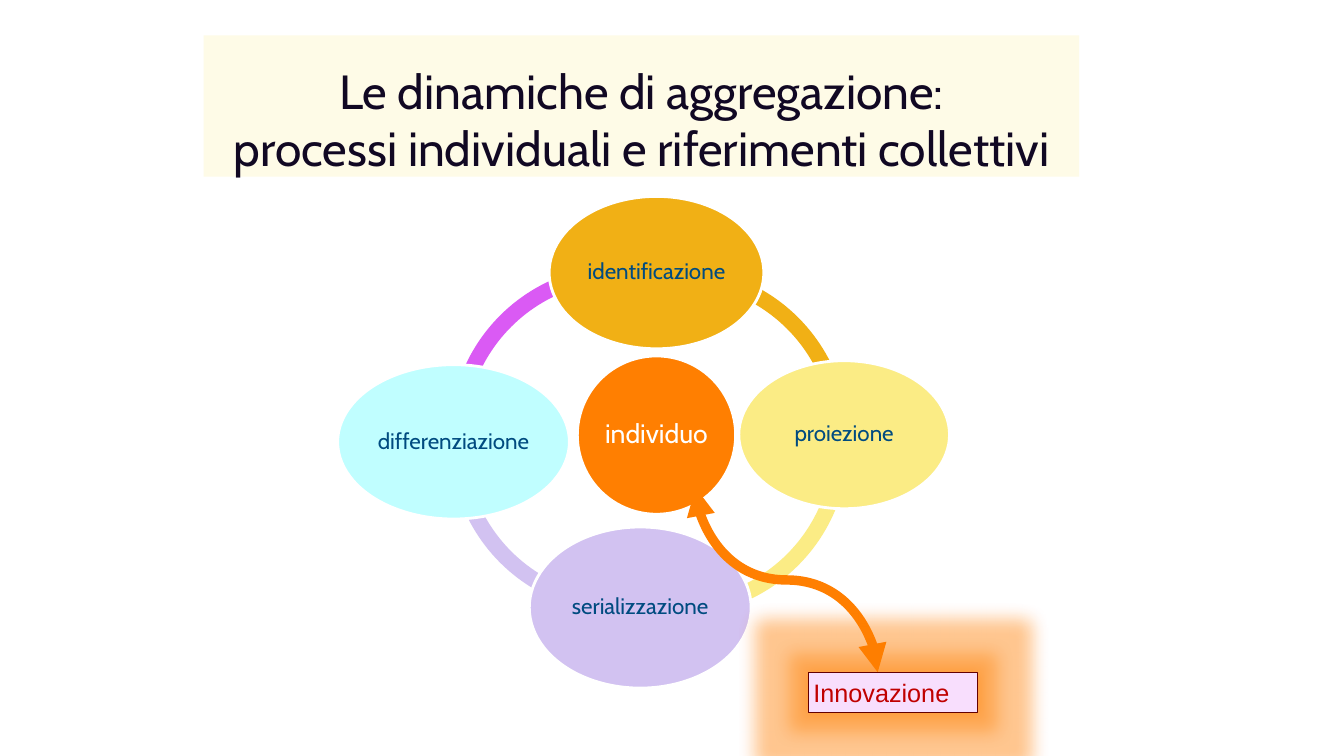
from dataclasses import dataclass

from lxml.etree import SubElement
from pptx import Presentation
from pptx.dml.color import RGBColor
from pptx.enum.shapes import MSO_CONNECTOR, MSO_SHAPE
from pptx.enum.text import MSO_ANCHOR, PP_ALIGN
from pptx.oxml.ns import qn
from pptx.util import Cm, Pt


@dataclass(frozen=True)
class Theme:
    cream: str = "FEFBE7"
    ink: str = "110823"
    gold: str = "F1B015"
    yellow: str = "FBEC85"
    lilac: str = "D2C2F1"
    magenta: str = "DA5AF4"
    cyan: str = "C0FEFF"
    orange: str = "FF7F01"
    navy: str = "004B80"
    white: str = "FFFFFF"
    pink: str = "F8DEFD"
    maroon: str = "640000"
    red: str = "C00000"
    font: str = "Cabin"
    label_font: str = "Arial"
    title_size: float = 34.2
    hub_size: float = 19
    node_size: float = 16
    label_size: float = 18


class DiagramSlide:
    def __init__(self, slide, theme):
        self.slide = slide
        self.theme = theme

    def shape(self, kind, box, fill, line=None, line_width=1):
        shape = self.slide.shapes.add_shape(kind, *map(Cm, box))
        shape.shadow.inherit = False
        shape.fill.solid()
        shape.fill.fore_color.rgb = RGBColor.from_string(fill)
        if line:
            shape.line.color.rgb = RGBColor.from_string(line)
            shape.line.width = Pt(line_width)
        else:
            shape.line.fill.background()
        return shape

    def set_text(self, shape, text, size, color, font=None, align=PP_ALIGN.CENTER,
                 spacing=1.0, **frame_format):
        frame = shape.text_frame
        for name, value in {"word_wrap": True, **frame_format}.items():
            setattr(frame, name, value)
        paragraph = frame.paragraphs[0]
        paragraph.text = text
        paragraph.alignment = align
        paragraph.line_spacing = spacing
        run_format = {"name": font or self.theme.font, "size": Pt(size)}
        for run in paragraph.runs:
            for name, value in run_format.items():
                setattr(run.font, name, value)
            run.font.color.rgb = RGBColor.from_string(color)

    def title(self, text, box):
        shape = self.shape(MSO_SHAPE.RECTANGLE, box, self.theme.cream)
        self.set_text(shape, text, self.theme.title_size, self.theme.ink,
                      vertical_anchor=MSO_ANCHOR.BOTTOM, margin_bottom=0)

    def arc(self, left, top, diameter, start, end, color):
        """Draw a ring segment; start and end are in blockArc adjustment units."""
        shape = self.shape(MSO_SHAPE.BLOCK_ARC, (left, top, diameter, diameter), color)
        for index, value in enumerate((start, end, 0.046)):
            shape.adjustments[index] = value

    def node(self, text, box, fill, size, color):
        shape = self.shape(MSO_SHAPE.OVAL, box, fill, self.theme.white, 2)
        margins = {f"margin_{side}": Cm(0.05) for side in ("left", "top", "right", "bottom")}
        self.set_text(shape, text, size, color, spacing=0.9,
                      vertical_anchor=MSO_ANCHOR.MIDDLE, **margins)

    def curved_arrow(self, start, end, color, width):
        """Draw a double-headed S-curve that leaves and arrives vertically."""
        (x1, y1), (x2, y2) = start, end
        middle_x, middle_y = (x1 + x2) / 2, (y1 + y2) / 2
        half_width, half_height = (y2 - y1) / 2, (x2 - x1) / 2
        corners = (middle_x - half_width, middle_y - half_height,
                   middle_x + half_width, middle_y + half_height)
        connector = self.slide.shapes.add_connector(MSO_CONNECTOR.CURVE, *map(Cm, corners))
        connector.line.color.rgb = RGBColor.from_string(color)
        connector.line.width = Pt(width)
        properties = connector.element.spPr
        transform = properties.find(qn("a:xfrm"))
        transform.set("rot", str(270 * 60000))
        transform.set("flipH", "1")
        outline = properties.find(qn("a:ln"))
        for tag in ("a:headEnd", "a:tailEnd"):
            SubElement(outline, qn(tag), type="triangle")
        SubElement(properties, qn("a:effectLst"))

    def glowing_label(self, text, box):
        theme = self.theme
        shape = self.shape(MSO_SHAPE.RECTANGLE, box, theme.pink, theme.maroon)
        margins = {f"margin_{side}": Cm(0.13) for side in ("left", "top", "right", "bottom")}
        self.set_text(shape, text, theme.label_size, theme.red, theme.label_font,
                      PP_ALIGN.LEFT, vertical_anchor=MSO_ANCHOR.TOP, **margins)
        effects = shape.element.spPr.find(qn("a:effectLst"))
        for tag, radius_name, radius in (("a:glow", "rad", 0.9), ("a:outerShdw", "blurRad", 0.3)):
            effect = SubElement(effects, qn(tag), {radius_name: str(Cm(radius))})
            color = SubElement(effect, qn("a:srgbClr"), val=theme.orange)
            SubElement(color, qn("a:alpha"), val="40000")


def main():
    presentation = Presentation()
    presentation.slide_width, presentation.slide_height = Cm(33.87), Cm(19.05)
    theme = Theme()
    diagram = DiagramSlide(presentation.slides.add_slide(presentation.slide_layouts[6]), theme)

    diagram.title("Le dinamiche di aggregazione:\nprocessi individuali e riferimenti collettivi",
                  (5.13, 0.89, 22.07, 3.56))

    arcs = (
        (11.33, 6.68, 107.01, 169.26, theme.magenta),
        (11.33, 6.76, 50.27, 107.71, theme.lilac),
        (12.7, 6.83, 214.31, 61.55, theme.yellow),
        (12.7, 6.73, 158.01, 215.1, theme.gold),
    )
    for left, top, start, end, color in arcs:
        diagram.arc(left, top, 8.69, start, end, color)

    diagram.node("individuo", (14.55, 8.97, 3.99, 3.99), theme.orange,
                 theme.hub_size, theme.white)
    processes = (
        ("identificazione", (13.84, 4.95, 5.41, 3.84), theme.gold),
        ("proiezione", (18.62, 9.09, 5.31, 3.73), theme.yellow),
        ("serializzazione", (13.34, 13.28, 5.59, 4.06), theme.lilac),
        ("differenziazione", (8.51, 9.19, 5.84, 3.89), theme.cyan),
    )
    for text, box, fill in processes:
        diagram.node(text, box, fill, theme.node_size, theme.navy)

    diagram.curved_arrow((17.53, 12.29), (22.12, 16.94), theme.orange, 6.75)
    diagram.glowing_label("Innovazione", (20.37, 16.94, 4.27, 1.02))
    presentation.save("out.pptx")


if __name__ == "__main__":
    main()
